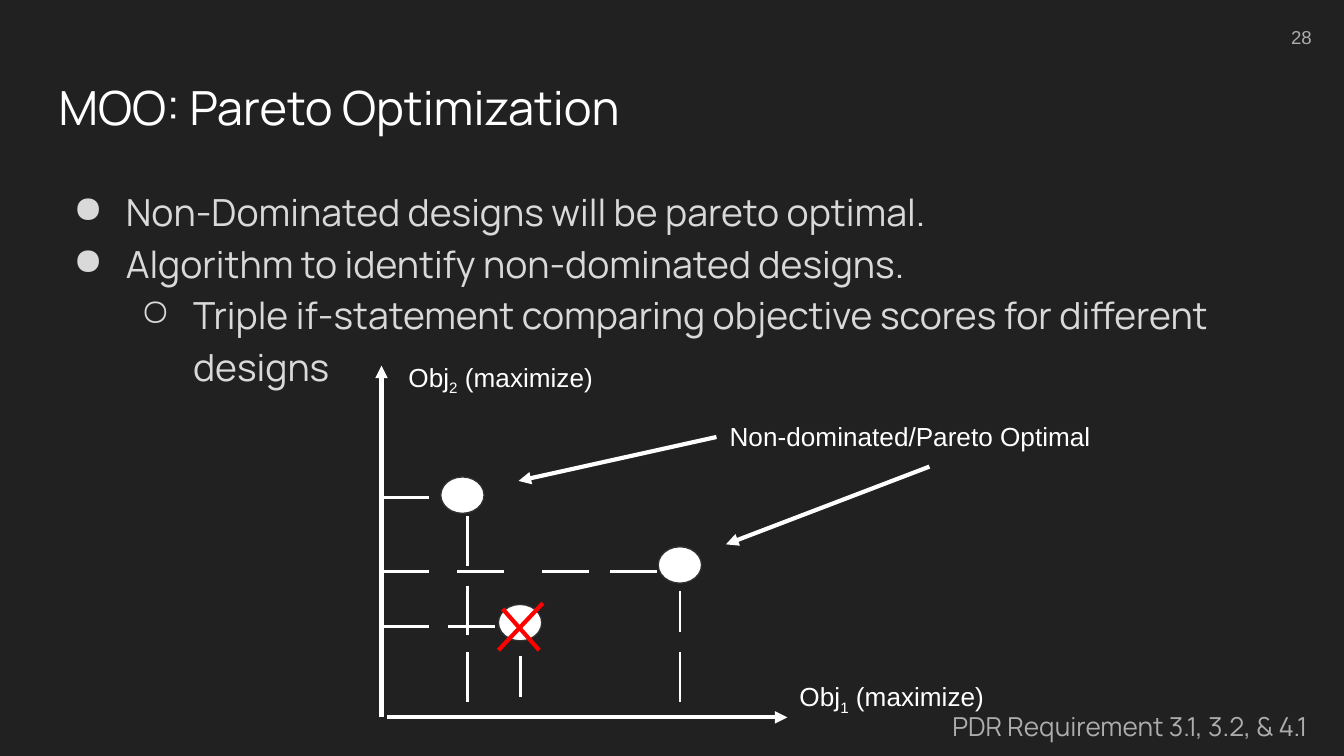
from lxml import etree
from pptx import Presentation
from pptx.dml.color import RGBColor
from pptx.enum.shapes import MSO_CONNECTOR, MSO_SHAPE
from pptx.enum.text import MSO_ANCHOR, PP_ALIGN
from pptx.oxml.ns import qn
from pptx.util import Cm, Pt

STRAIGHT, OVAL = MSO_CONNECTOR.STRAIGHT, MSO_SHAPE.OVAL
LEFT, RIGHT = PP_ALIGN.LEFT, PP_ALIGN.RIGHT
TOP, MIDDLE = MSO_ANCHOR.TOP, MSO_ANCHOR.MIDDLE
SIDE_LEFT, SIDE_BOTTOM = 1, 2

COLORS = {"background": "212121", "white": "FFFFFF", "body": "D9D9D9",
          "muted": "ADADAD", "outline": "303030", "red": "FF0000"}

# Content; all lengths in centimetres
TITLE = "MOO: Pareto Optimization"
BULLETS = [  # level, text
    (0, "Non-Dominated designs will be pareto optimal."),
    (0, "Algorithm to identify non-dominated designs."),
    (1, "Triple if-statement comparing objective scores for different designs"),
]
BULLET_SIGNS = "●○"
PAGE_NUMBER = "28"
FOOTNOTE = "PDR Requirement 3.1, 3.2, & 4.1"
CALLOUT = "Non-dominated/Pareto Optimal"
AXIS_LABELS = [("2", 7.47, 6.58), ("1", 14.86, 12.62)]  # index, left, top

AXIS_X, AXIS_Y = 7.21, 13.56
AXES = [(AXIS_X, AXIS_Y, AXIS_X, 6.91), (7.32, AXIS_Y, 14.88, AXIS_Y)]
DESIGNS = [(8.74, 9.36), (9.83, 11.77), (12.85, 10.68)]  # centres
DOT_WIDTH, DOT_HEIGHT = 0.82, 0.69
DASH = 0.89
ROW_DASHES = {9.4: [AXIS_X], 10.8: [AXIS_X, 8.64, 10.24, 11.53],
              11.84: [AXIS_X, 8.46]}  # y: dash starts
COLUMN_DASHES = {8.84: [(9.75, 10.69), (11.07, 12.01), (12.32, 13.26)],
                 9.84: [(12.4, 13.18)],
                 12.85: [(11.18, 11.94), (12.32, 13.26)]}  # x: dash ends
CALLOUT_ARROWS = [  # side of the callout, start, end
    (SIDE_LEFT, 13.54, 8.26, 9.8, 9.09),
    (SIDE_BOTTOM, 17.57, 8.82, 13.72, 10.29),
]
CROSS = [(9.5, 11.51, 10.19, 12.29), (10.26, 11.4, 9.42, 12.29)]


def rgb(name):
    return RGBColor.from_string(COLORS[name])


def style(para, size, font, color):
    for span in para.runs:
        span.font.size, span.font.name = Pt(size), font
        span.font.color.rgb = rgb(color)


def add_text(text, left, top, width, height, size, font, color,
             align=LEFT, anchor=TOP):
    box = slide.shapes.add_textbox(Cm(left), Cm(top), Cm(width), Cm(height))
    frame = box.text_frame
    frame.word_wrap, frame.vertical_anchor = True, anchor
    frame.margin_left = frame.margin_right = Cm(0.25)
    frame.margin_top = frame.margin_bottom = Cm(0.25)
    frame.text = text
    for para in frame.paragraphs:
        para.alignment = align
        style(para, size, font, color)
    return box


def add_line(x1, y1, x2, y2, width=2.25, color="white", arrow=False):
    line = slide.shapes.add_connector(STRAIGHT, Cm(x1), Cm(y1), Cm(x2), Cm(y2))
    line.line.width = Pt(width)
    line.line.color.rgb = rgb(color)
    if arrow:
        etree.SubElement(line.line._get_or_add_ln(), qn("a:tailEnd"), type="triangle")
    etree.SubElement(line._element.spPr, qn("a:effectLst"))
    return line


def add_bullet(para, level):
    para.level, para.line_spacing = level, 1.15
    properties = para._p.get_or_add_pPr()
    properties.set("marL", str(Cm(1.27 * (level + 1))))
    properties.set("indent", str(Cm(-0.99)))
    color = etree.SubElement(properties, qn("a:buClr"))
    etree.SubElement(color, qn("a:srgbClr"), val=COLORS["body"])
    etree.SubElement(properties, qn("a:buChar"), char=BULLET_SIGNS[level])


deck = Presentation()
deck.slide_width, deck.slide_height = Cm(25.4), Cm(14.29)
slide = deck.slides.add_slide(deck.slide_layouts[6])
slide.background.fill.solid()
slide.background.fill.fore_color.rgb = rgb("background")

# Title, bullets and page number
add_text(TITLE, 0.86, 1.24, 23.67, 1.6, 25.2, "Manrope", "white")
body = add_text("\n".join(text for _, text in BULLETS),
                0.86, 3.2, 23.67, 5.72, 20, "Manrope", "body")
for para, (level, _) in zip(body.text_frame.paragraphs, BULLETS):
    add_bullet(para, level)
add_text(PAGE_NUMBER, 23.52, 0.15, 1.52, 1.09, 10, "Arial", "muted", RIGHT, MIDDLE)

# Axes and their labels
for ends in AXES:
    add_line(*ends, arrow=True)
for index, left, top in AXIS_LABELS:
    label = add_text("Obj", left, top, 4.78, 1.12, 14, "Arial", "white")
    para = label.text_frame.paragraphs[0]
    subscript = para.add_run()
    subscript.text = index
    subscript.font._element.set("baseline", "-25000")
    para.add_run().text = " (maximize)"
    style(para, 14, "Arial", "white")

# Designs
for x, y in DESIGNS:
    dot = slide.shapes.add_shape(OVAL, Cm(x - DOT_WIDTH / 2), Cm(y - DOT_HEIGHT / 2),
                                 Cm(DOT_WIDTH), Cm(DOT_HEIGHT))
    dot.shadow.inherit = False
    dot.fill.solid()
    dot.fill.fore_color.rgb = rgb("white")
    dot.line.color.rgb = rgb("outline")
    dot.line.width = Pt(0.75)

# Dashed guides to the axes
for y, starts in ROW_DASHES.items():
    for x in starts:
        add_line(x, y, x + DASH, y, 1.5)
for x, dashes in COLUMN_DASHES.items():
    for top, bottom in dashes:
        add_line(x, top, x, bottom, 1.5)

# Callout and its arrows
callout = add_text(CALLOUT, 13.54, 7.7, 8.05, 1.12, 14, "Arial", "white")
for side, *ends in CALLOUT_ARROWS:
    add_line(*ends, arrow=True).begin_connect(callout, side)

# Cross over the dominated design
for ends in CROSS:
    add_line(*ends, color="red")

add_text(FOOTNOTE, 17.75, 13.18, 7.65, 1.12, 14, "Manrope", "muted")

deck.save("out.pptx")
